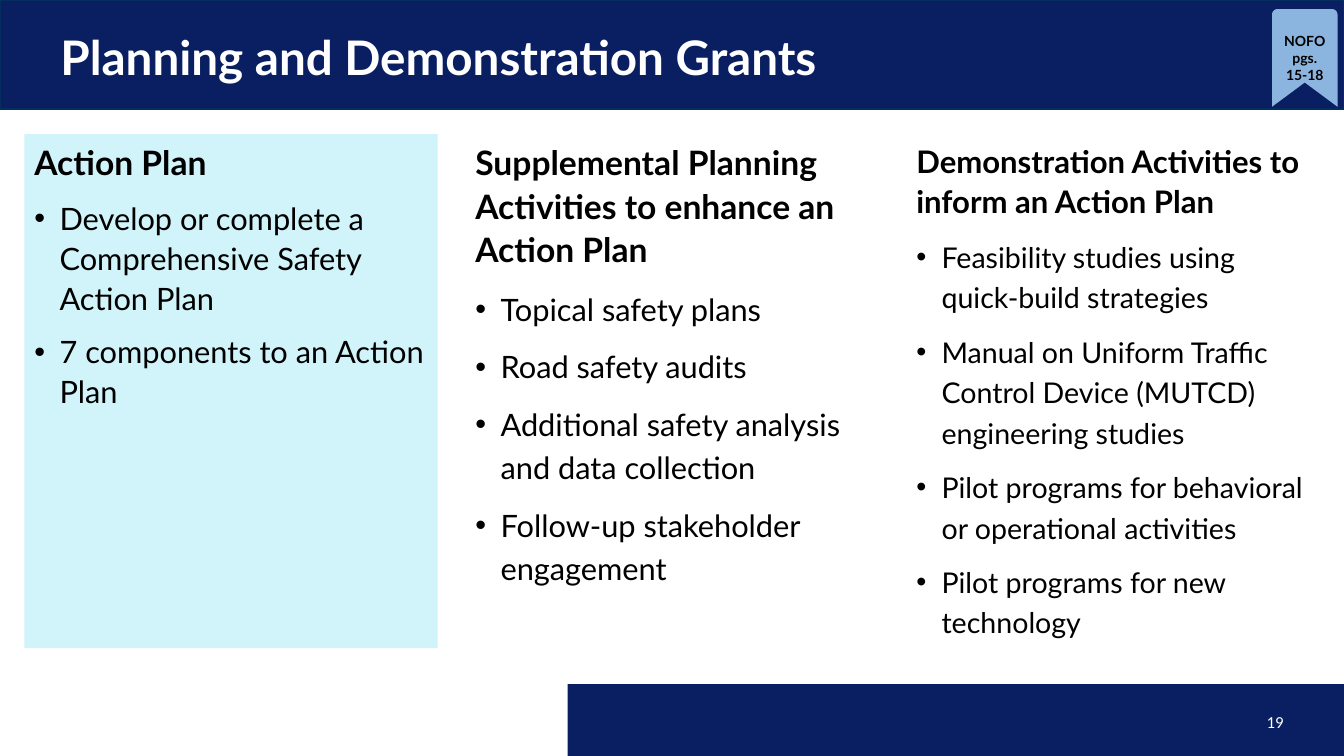
from math import cos, pi, sin

from lxml.etree import SubElement
from pptx import Presentation
from pptx.dml.color import RGBColor
from pptx.enum.shapes import MSO_SHAPE
from pptx.enum.text import MSO_ANCHOR, MSO_AUTO_SIZE, PP_ALIGN
from pptx.oxml.ns import qn
from pptx.util import Pt

COLORS = {
    "navy": "0A1F61",
    "edge": "042E5D",
    "aqua": "D1F4FA",
    "ribbon": "8BB4DF",
    "white": "FFFFFF",
    "black": "000000",
}
WIDTH, HEIGHT = 960, 540
HEADER_HEIGHT = 77.8
COLUMN_TOP, COLUMN_WIDTH, COLUMN_HEIGHT = 95.8, 295.2, 367.2
COLUMN_LEFT, COLUMN_STEP = 17.5, 315
COLUMNS = [
    {
        "heading": "Action Plan",
        "items": [
            "Develop or complete a Comprehensive Safety Action Plan",
            "7 components to an Action Plan",
        ],
        "heading_size": 24, "item_size": 22, "spacing": 1.08, "fill": "aqua",
    },
    {
        "heading": "Supplemental Planning Activities to enhance an Action Plan",
        "items": [
            "Topical safety plans",
            "Road safety audits",
            "Additional safety analysis and data collection",
            "Follow-up stakeholder engagement",
        ],
        "heading_size": 24, "item_size": 22, "spacing": 1.18,
    },
    {
        "heading": "Demonstration Activities to inform an Action Plan",
        "items": [
            "Feasibility studies using quick-build strategies",
            "Manual on Uniform Traffic Control Device (MUTCD) engineering studies",
            "Pilot programs for behavioral or operational activities",
            "Pilot programs for new technology",
        ],
        "heading_size": 22.2, "item_size": 20.4, "spacing": 1.18,
    },
]


def rgb(name):
    """Return the named palette colour."""
    return RGBColor.from_string(COLORS[name])


def write(frame, text, size=22, font="Lato", color="black", bold=False,
          align=PP_ALIGN.LEFT, spacing=1.0, before=0, bullet=False):
    """Add one formatted paragraph to a text frame."""
    paragraph = frame.paragraphs[0] if not frame.text else frame.add_paragraph()
    if bullet:
        properties = paragraph._p.get_or_add_pPr()
        properties.set("marL", str(Pt(18)))
        properties.set("indent", str(-Pt(18)))
        SubElement(properties, qn("a:buFont"), typeface="Arial")
        SubElement(properties, qn("a:buChar"), char="•")
    paragraph.alignment = align
    paragraph.line_spacing = spacing
    paragraph.space_before = Pt(before)
    run = paragraph.add_run()
    run.text = text
    run.font.size = Pt(size)
    run.font.name = font
    run.font.bold = bold
    run.font.color.rgb = rgb(color)


def paint(shape, fill, line=None):
    """Give a shape a flat fill and an optional one-point outline."""
    shape.shadow.inherit = False
    shape.fill.solid()
    shape.fill.fore_color.rgb = rgb(fill)
    if line:
        shape.line.color.rgb = rgb(line)
        shape.line.width = Pt(1)
    else:
        shape.line.fill.background()


def add_panel(slide, left, top, width, height, fill, line=None):
    """Add a filled rectangle."""
    panel = slide.shapes.add_shape(
        MSO_SHAPE.RECTANGLE, Pt(left), Pt(top), Pt(width), Pt(height))
    paint(panel, fill, line)
    return panel


def add_header(slide, left, top, width, height):
    """Draw the header band and set the title over it."""
    add_panel(slide, left, top, width, height, "navy", "edge")
    title = slide.shapes.title
    slide.shapes._spTree.append(title._element)
    title.left, title.top = Pt(left + 36), Pt(top)
    title.width, title.height = Pt(width - 72), Pt(height)
    frame = title.text_frame
    frame.auto_size = MSO_AUTO_SIZE.NONE
    frame.vertical_anchor = MSO_ANCHOR.MIDDLE
    write(frame, "Planning and Demonstration Grants", size=34,
          color="white", bold=True, spacing=1.08)


def add_footer(slide, left, top, width, height):
    """Draw the footer band with its page number."""
    add_panel(slide, left, top, width, height, "navy")
    number = slide.shapes.add_textbox(
        Pt(left + width - 252), Pt(top + 18), Pt(216), Pt(18))
    frame = number.text_frame
    frame.word_wrap = True
    frame.vertical_anchor = MSO_ANCHOR.MIDDLE
    write(frame, "19", size=12, font="Calibri", color="white",
          align=PP_ALIGN.RIGHT)


def add_column(slide, left, top, width, height, heading, items,
               heading_size, item_size, spacing, fill=None):
    """Add a heading with its bulleted list, on a panel if filled."""
    if fill:
        column = add_panel(slide, left, top, width, height, fill)
    else:
        column = slide.shapes.add_textbox(
            Pt(left), Pt(top), Pt(width), Pt(height))
    frame = column.text_frame
    frame.word_wrap = True
    frame.vertical_anchor = MSO_ANCHOR.TOP
    write(frame, heading, size=heading_size, bold=True, spacing=1.08)
    for item in items:
        write(frame, item, size=item_size, spacing=spacing, before=10,
              bullet=True)


def add_ribbon(slide, left, top, width, height, radius=4, notch=17.3):
    """Draw the page-reference ribbon with rounded top and notched foot."""
    right, bottom = left + width, top + height
    corners = [(right - radius, 0), (left + radius, pi / 2)]
    arcs = [
        (center + radius * cos(start + step * pi / 16),
         top + radius - radius * sin(start + step * pi / 16))
        for center, start in corners for step in range(9)
    ]
    outline = arcs + [(left, bottom), (left + width / 2, bottom - notch)]
    builder = slide.shapes.build_freeform(Pt(right), Pt(bottom))
    builder.add_line_segments([(Pt(x), Pt(y)) for x, y in outline], close=True)
    ribbon = builder.convert_to_shape()
    paint(ribbon, "ribbon")
    frame = ribbon.text_frame
    frame.word_wrap = True
    frame.vertical_anchor = MSO_ANCHOR.MIDDLE
    for label in ("NOFO pgs.", "15-18"):
        write(frame, label, size=10, bold=True, align=PP_ALIGN.CENTER)


def main():
    """Build and save the slide."""
    deck = Presentation()
    deck.slide_width, deck.slide_height = Pt(WIDTH), Pt(HEIGHT)
    slide = deck.slides.add_slide(deck.slide_layouts.get_by_name("Title Only"))
    add_footer(slide, 405.4, 488.7, WIDTH - 405.4, HEIGHT - 488.7)
    add_header(slide, 0, 0, WIDTH, HEADER_HEIGHT)
    for index, column in enumerate(COLUMNS):
        add_column(slide, COLUMN_LEFT + index * COLUMN_STEP, COLUMN_TOP,
                   COLUMN_WIDTH, COLUMN_HEIGHT, **column)
    add_ribbon(slide, 908.6, 6.5, 46.8, 69.8)
    deck.save("out.pptx")


if __name__ == "__main__":
    main()
